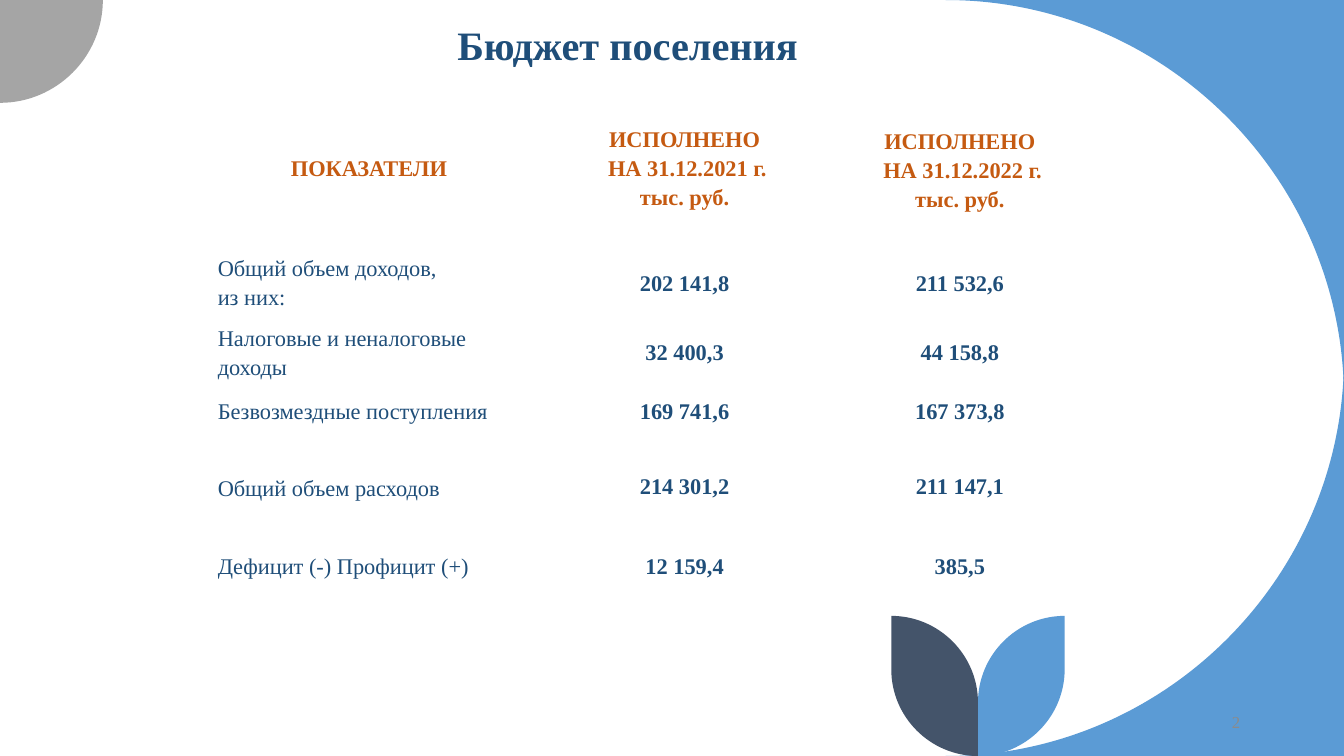
from lxml.etree import SubElement
from pptx import Presentation
from pptx.dml.color import RGBColor
from pptx.enum.text import MSO_ANCHOR, PP_ALIGN
from pptx.oxml.ns import qn
from pptx.util import Inches, Pt

WIDTH, HEIGHT = 13.33, 7.5
FONT = "Times New Roman"
CIRCLE = 0.55  # Bezier handle length of a quarter circle, as a share of its radius
COLORS = {"blue": "5B9BD5", "grey": "A5A5A5", "slate": "44546A",
          "navy": "1F4E79", "orange": "C55A11", "number": "8B8B8B"}
COLUMNS = [3.2, 3.06, 2.4]
ROWS = [1.59, 0.69, 0.69, 0.48, 1.01, 0.57]
BUDGET = [
    ("ПОКАЗАТЕЛИ",
     "ИСПОЛНЕНО\n НА 31.12.2021 г.\nтыс. руб.",
     "ИСПОЛНЕНО\n НА 31.12.2022 г.\nтыс. руб."),
    ("Общий объем доходов,\nиз них:", "202 141,8", "211 532,6"),
    ("Налоговые и неналоговые\nдоходы", "32 400,3", "44 158,8"),
    ("Безвозмездные поступления", "169 741,6", "167 373,8"),
    ("Общий объем расходов", "214 301,2", "211 147,1"),
    ("Дефицит (-) Профицит (+)", "12 159,4", "385,5"),
]
LOWERED_CELLS = {(0, 2), (4, 0)}


def add_run(paragraph, text, size, color, bold=False):
    run = paragraph.add_run()
    run.text = text
    run.font.name = FONT
    run.font.size = Pt(size)
    run.font.bold = bold
    run.font.color.rgb = RGBColor.from_string(COLORS[color])


def quarter_arc(center_x, center_y, radius_x, radius_y):
    """Start, two handles and end; the signs of the radii choose the quadrant."""
    return [(center_x + radius_x * x, center_y + radius_y * y)
            for x, y in ((0, 1), (CIRCLE, 1), (1, CIRCLE), (1, 0))]


def add_outline(shapes, arcs, corners, color):
    """Outline made of quarter arcs joined by lines, then of plain corners."""
    points = [(Inches(x), Inches(y)) for x, y in sum(arcs, []) + corners]
    builder = shapes.build_freeform(*points[0])
    builder.add_line_segments(points[1:], close=True)
    shape = builder.convert_to_shape()
    # Turn the three segments of each arc into one curve
    lines = list(shape.element.iter(qn("a:lnTo")))
    for index in range(len(arcs)):
        segments = lines[4 * index:4 * index + 3]
        outline = segments[0].getparent()
        curve = SubElement(outline, qn("a:cubicBezTo"))
        outline.replace(segments[0], curve)
        for segment in segments:
            curve.append(segment[0])
        for segment in segments[1:]:
            outline.remove(segment)
    shape.shadow.inherit = False
    shape.fill.solid()
    shape.fill.fore_color.rgb = RGBColor.from_string(COLORS[color])
    shape.line.fill.background()


def add_corners(slide, radius, small_radius):
    left = WIDTH - radius
    # Right-hand corners, top and bottom
    for edge, side in ((0, -1), (HEIGHT, 1)):
        arc = quarter_arc(left, edge - side * radius, radius, side * radius)
        add_outline(slide.shapes, [arc], [(WIDTH, edge)], "blue")
    # Top left corner
    arc = quarter_arc(0, 0, small_radius, small_radius)
    add_outline(slide.shapes, [arc], [(0, 0)], "grey")


def add_leaves(slide, stem, top, bottom, width):
    group = slide.shapes.add_group_shape()
    for side, color in ((1, "blue"), (-1, "slate")):
        reach = side * width
        lower = quarter_arc(stem, bottom - width, reach, width)
        # The upper arc runs from the outer tip back to the stem
        upper = quarter_arc(stem + reach, top + width, -reach, -width)
        add_outline(group.shapes, [lower, upper], [], color)


def add_title(slide, left, top, width, height):
    title = slide.shapes.title
    title.left, title.top = Inches(left), Inches(top)
    title.width, title.height = Inches(width), Inches(height)
    title.text_frame.vertical_anchor = MSO_ANCHOR.MIDDLE
    paragraph = title.text_frame.paragraphs[0]
    paragraph.alignment = PP_ALIGN.CENTER
    paragraph.line_spacing = 0.9
    add_run(paragraph, "Бюджет поселения", 28.8, "navy", bold=True)


def fill_cell(cell, text, row, column):
    cell.fill.background()
    cell.vertical_anchor = MSO_ANCHOR.MIDDLE
    cell.margin_top = Inches(0.09 if (row, column) in LOWERED_CELLS else 0.05)
    is_header, is_label = row == 0, row > 0 and column == 0
    frame = cell.text_frame
    for index, line in enumerate(text.split("\n")):
        paragraph = frame.add_paragraph() if index else frame.paragraphs[0]
        paragraph.alignment = PP_ALIGN.LEFT if is_label else PP_ALIGN.CENTER
        paragraph.space_before = Pt(2.8)
        add_run(paragraph, line, 16, "orange" if is_header else "navy",
                bold=not is_label)


def add_budget_table(slide, left, top):
    table = slide.shapes.add_table(
        len(ROWS), len(COLUMNS), Inches(left), Inches(top),
        Inches(sum(COLUMNS)), Inches(sum(ROWS))).table
    table.first_row = table.horz_banding = False
    for column, width in zip(table.columns, COLUMNS):
        column.width = Inches(width)
    for row, height in zip(table.rows, ROWS):
        row.height = Inches(height)
    for row, texts in enumerate(BUDGET):
        for column, text in enumerate(texts):
            fill_cell(table.cell(row, column), text, row, column)


def add_slide_number(slide, left, top, width, height):
    box = slide.shapes.add_textbox(Inches(left), Inches(top),
                                   Inches(width), Inches(height))
    frame = box.text_frame
    frame.word_wrap = True
    frame.vertical_anchor = MSO_ANCHOR.MIDDLE
    frame.paragraphs[0].alignment = PP_ALIGN.RIGHT
    add_run(frame.paragraphs[0], "2", 12, "number")


def main():
    presentation = Presentation()
    presentation.slide_width = Inches(WIDTH)
    presentation.slide_height = Inches(HEIGHT)
    slide = presentation.slides.add_slide(presentation.slide_layouts[5])
    add_corners(slide, radius=3.95, small_radius=1.02)
    add_leaves(slide, stem=9.7, top=6.11, bottom=HEIGHT, width=0.86)
    add_title(slide, 2.45, 0.23, 7.55, 0.48)
    add_budget_table(slide, 2.06, 0.88)
    add_slide_number(slide, 11.4, 6.96, 1, 0.4)
    presentation.save("out.pptx")


if __name__ == "__main__":
    main()
